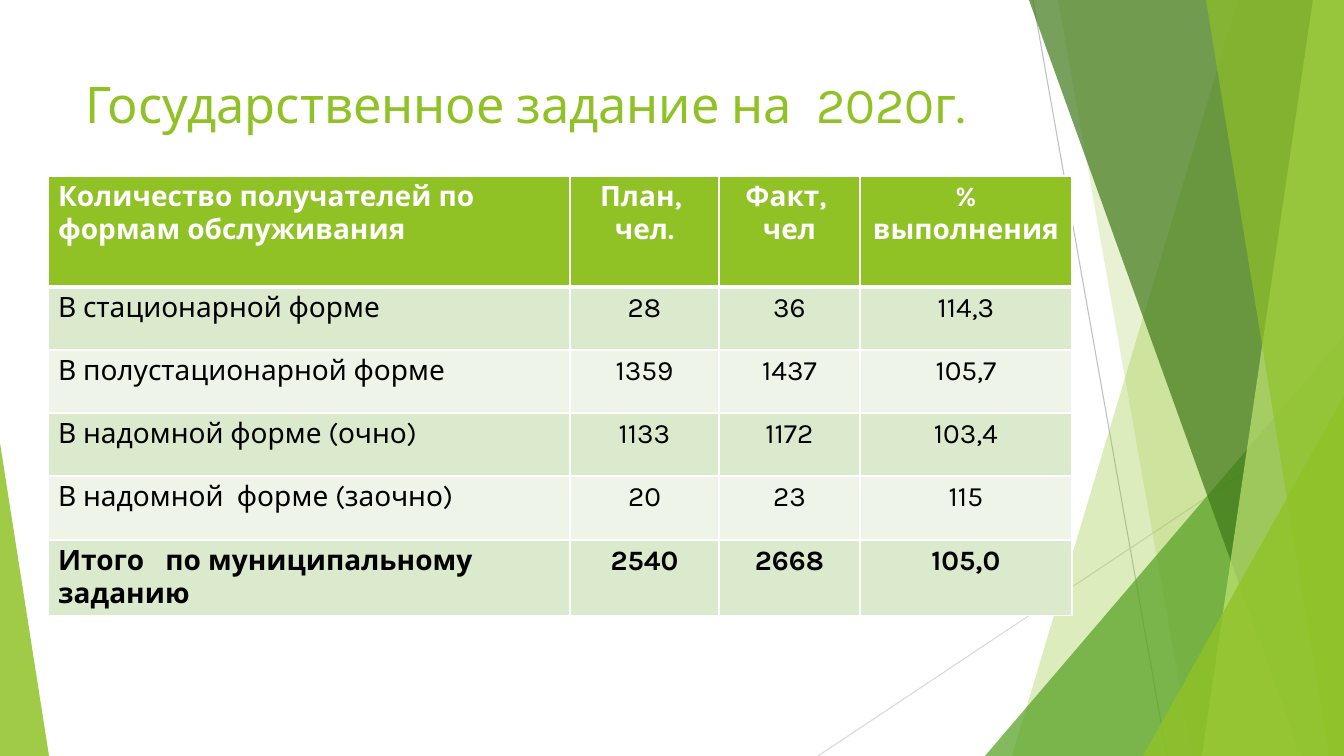
from dataclasses import dataclass

from lxml import etree
from pptx import Presentation
from pptx import util as u
from pptx.dml.color import RGBColor
from pptx.enum import shapes, text
from pptx.oxml import ns

EMU_PER_PX = 914400 / 100.8
SLIDE_WIDTH, SLIDE_HEIGHT = 1344, 756
FONT = "Karla"

WHITE = RGBColor(0xFF, 0xFF, 0xFF)
BLACK = RGBColor(0x00, 0x00, 0x00)
LIME = RGBColor(0x90, 0xC2, 0x26)
PALE_LIME = RGBColor(0xC0, 0xE4, 0x74)
GREEN = RGBColor(0x54, 0xA0, 0x21)
DARK_GREEN = RGBColor(0x3F, 0x78, 0x19)
ODD_ROW = RGBColor(0xDB, 0xE9, 0xCD)
EVEN_ROW = RGBColor(0xEE, 0xF4, 0xE8)
GREY = RGBColor(0xBF, 0xBF, 0xBF)
LIGHT_GREY = RGBColor(0xD9, 0xD9, 0xD9)


@dataclass
class Ray:
    start: tuple[int, int]
    end: tuple[int, int]
    color: RGBColor


@dataclass
class Band:
    top_left: int
    bottom_left: int
    color: RGBColor
    opacity: int


@dataclass
class Corner:
    left: int
    top: int
    width: int
    apex: int
    color: RGBColor
    opacity: int


RAYS = [
    Ray((1033, 0), (1167, SLIDE_HEIGHT), GREY),
    Ray((SLIDE_WIDTH, 406), (818, SLIDE_HEIGHT), LIGHT_GREY),
]
FACETS = [
    Band(1238, 1012, LIME, 30),
    Band(1058, 1192, LIME, 20),
    Corner(985, 336, 359, 1, GREEN, 72),
    Band(1029, 1301, DARK_GREEN, 70),
    Band(1313, 1202, PALE_LIME, 70),
    Band(1206, 1329, LIME, 65),
    Corner(1143, 396, 201, 1, LIME, 80),
    Corner(0, 443, 49, 0, LIME, 85),
]
COLUMN_WIDTHS = [522, 149, 141, 212]
ROW_HEIGHTS = [111, 63, 63, 63, 64, 64]
ROWS = [
    ["Количество получателей по формам обслуживания", "План, \nчел.", "Факт, \nчел", "% выполнения"],
    ["В стационарной форме", "28", "36", "114,3"],
    ["В полустационарной форме", "1359", "1437", "105,7"],
    ["В надомной форме (очно)", "1133", "1172", "103,4"],
    ["В надомной  форме (заочно)", "20", "23", "115"],
    ["Итого   по муниципальному заданию", "2540", "2668", "105,0"],
]


def px(length: int) -> u.Emu:
    return u.Emu(round(length * EMU_PER_PX))


def add_run(paragraph, words: str, size: int, color: RGBColor, bold: bool = False) -> None:
    run = paragraph.add_run()
    run.text = words
    run.font.name = FONT
    run.font.size = u.Pt(size)
    run.font.bold = bold
    run.font.color.rgb = color


def draw_ray(slide, ray: Ray) -> None:
    connector = slide.shapes.add_connector(
        shapes.MSO_CONNECTOR.STRAIGHT, *map(px, ray.start + ray.end)
    )
    connector.line.color.rgb = ray.color
    connector.line.width = u.Pt(0.75)
    etree.SubElement(connector.element.spPr, ns.qn("a:effectLst"))


def draw_facet(slide, facet: Band | Corner) -> None:
    if isinstance(facet, Band):
        builder = slide.shapes.build_freeform(facet.top_left, 0, scale=EMU_PER_PX)
        builder.add_line_segments(
            [(SLIDE_WIDTH, 0), (SLIDE_WIDTH, SLIDE_HEIGHT), (facet.bottom_left, SLIDE_HEIGHT)]
        )
        shape = builder.convert_to_shape()
    else:
        shape = slide.shapes.add_shape(
            shapes.MSO_SHAPE.ISOSCELES_TRIANGLE,
            px(facet.left), px(facet.top), px(facet.width), px(SLIDE_HEIGHT - facet.top),
        )
        shape.adjustments[0] = facet.apex
    shape.shadow.inherit = False
    shape.line.fill.background()
    shape.fill.solid()
    shape.fill.fore_color.rgb = facet.color
    color = shape.element.spPr.find(ns.qn("a:solidFill"))[0]
    etree.SubElement(color, ns.qn("a:alpha"), val=str(facet.opacity * 1000))


def write_title(slide) -> None:
    title = slide.shapes.title
    title.left, title.top, title.width, title.height = map(px, (75, 68, 948, 145))
    frame = title.text_frame
    frame.word_wrap = True
    frame.auto_size = text.MSO_AUTO_SIZE.NONE
    frame.vertical_anchor = text.MSO_ANCHOR.TOP
    paragraph = frame.paragraphs[0]
    paragraph.alignment = text.PP_ALIGN.LEFT
    add_run(paragraph, "Государственное задание на  2020г.", 36, LIME)


def set_borders(cell, bottom: int, top: int) -> None:
    properties = cell._tc.get_or_add_tcPr()
    for side, points in (("L", 1), ("R", 1), ("T", top), ("B", bottom)):
        line = etree.SubElement(properties, ns.qn(f"a:ln{side}"), w=str(u.Pt(points)))
        fill = etree.SubElement(line, ns.qn("a:solidFill"))
        etree.SubElement(fill, ns.qn("a:srgbClr"), val=str(WHITE))


def fill_cell(cell, words: str, row: int, column: int) -> None:
    header = row == 0
    set_borders(cell, bottom=3 if header else 1, top=3 if row == 1 else 1)
    cell.fill.solid()
    cell.fill.fore_color.rgb = LIME if header else (ODD_ROW if row % 2 else EVEN_ROW)
    frame = cell.text_frame
    for index, line in enumerate(words.split("\n")):
        paragraph = frame.add_paragraph() if index else frame.paragraphs[0]
        paragraph.alignment = text.PP_ALIGN.CENTER if column else text.PP_ALIGN.LEFT
        add_run(paragraph, line, 20, WHITE if header else BLACK, row in (0, len(ROWS) - 1))


def draw_table(slide) -> None:
    table = slide.shapes.add_table(
        len(ROWS), len(COLUMN_WIDTHS),
        px(48), px(176), px(sum(COLUMN_WIDTHS)), px(sum(ROW_HEIGHTS)),
    ).table
    for column, width in zip(table.columns, COLUMN_WIDTHS):
        column.width = px(width)
    for row, height in zip(table.rows, ROW_HEIGHTS):
        row.height = px(height)
    for row, entries in enumerate(ROWS):
        for column, words in enumerate(entries):
            fill_cell(table.cell(row, column), words, row, column)


def main() -> None:
    presentation = Presentation()
    presentation.slide_width = px(SLIDE_WIDTH)
    presentation.slide_height = px(SLIDE_HEIGHT)
    slide = presentation.slides.add_slide(presentation.slide_layouts.get_by_name("Title Only"))
    for ray in RAYS:
        draw_ray(slide, ray)
    for facet in FACETS:
        draw_facet(slide, facet)
    write_title(slide)
    draw_table(slide)
    presentation.save("out.pptx")


if __name__ == "__main__":
    main()
